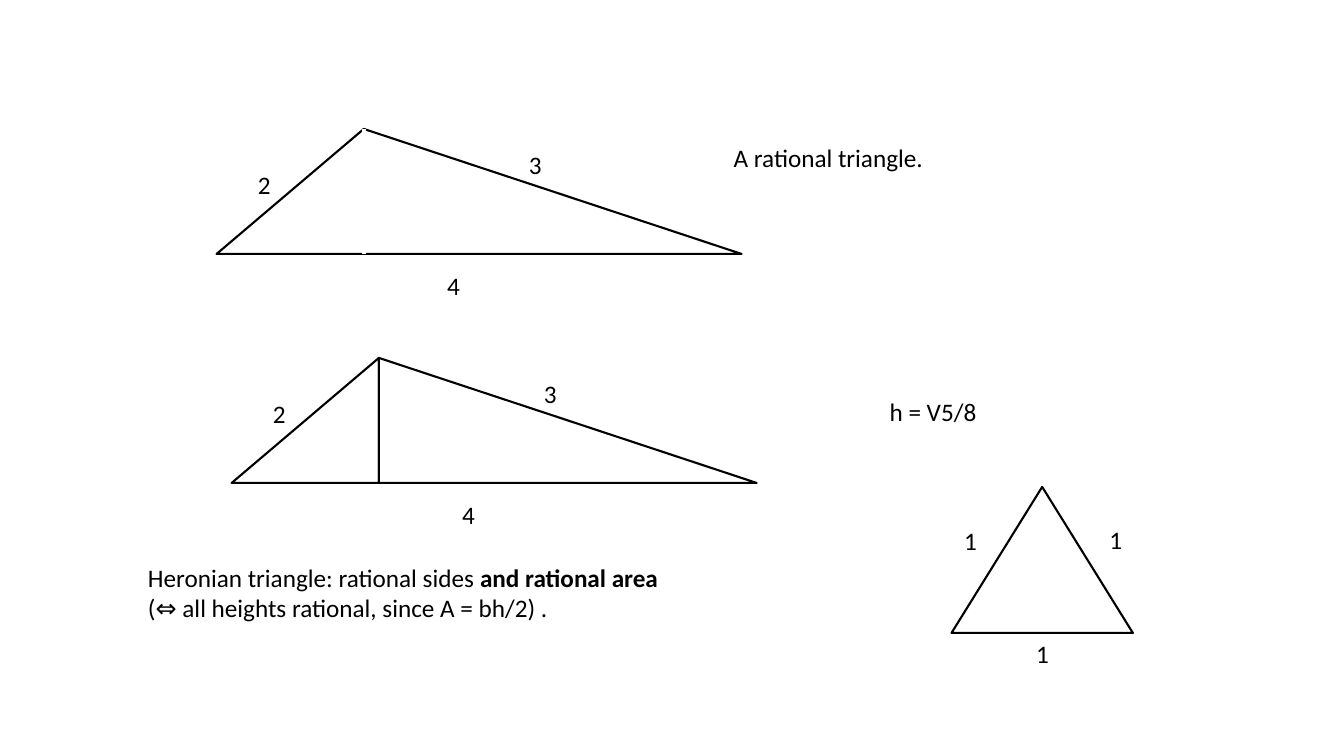
"""Build a slide comparing rational and Heronian triangles."""
from pptx import Presentation
from pptx.dml.color import RGBColor
from pptx.enum.shapes import MSO_CONNECTOR as Connector, MSO_SHAPE as Shape
from pptx.enum.text import MSO_AUTO_SIZE as AutoSize
from pptx.oxml.ns import qn
from pptx.util import Cm, Pt
from lxml.etree import SubElement

BLACK = RGBColor(0x00, 0x00, 0x00)
WHITE = RGBColor(0xFF, 0xFF, 0xFF)


def write_span(para, text, font="Calibri", size=18, color=BLACK, bold=False):
    span = para.add_run()
    span.text = text
    span.font.name = font
    span.font.size = Pt(size)
    span.font.color.rgb = color
    span.font.bold = bold


class TrianglePage:
    label_width, line_height = 0.84, 1.02

    def __init__(self, page):
        self.page = page
        self.shapes = page.shapes

    def start_group(self):
        self.shapes = self.page.shapes.add_group_shape().shapes

    def end_group(self):
        self.shapes = self.page.shapes

    def text(self, left, top, width, height, paragraphs, wrap=True):
        box = self.shapes.add_textbox(Cm(left), Cm(top), Cm(width), Cm(height))
        frame = box.text_frame
        frame.word_wrap = wrap
        frame.auto_size = AutoSize.SHAPE_TO_FIT_TEXT
        for index, spans in enumerate(paragraphs):
            para = frame.add_paragraph() if index else frame.paragraphs[0]
            for text, bold in spans:
                write_span(para, text, bold=bold)

    def line_of_text(self, left, top, width, text, wrap=False):
        self.text(left, top, width, self.line_height, [[(text, False)]], wrap)

    def label(self, left, top, text):
        self.line_of_text(left, top, self.label_width, text)

    def triangle(self, kind, left, top, width, height, flipped=False):
        shape = self.shapes.add_shape(kind, Cm(left), Cm(top), Cm(width), Cm(height))
        shape.shadow.inherit = False
        shape.fill.background()
        shape.line.color.rgb = BLACK
        shape.line.width = Pt(1.5)
        if flipped:
            shape._element.spPr.xfrm.set("flipH", "1")

    def vertical(self, left, top, height, color, weight):
        line = self.shapes.add_connector(
            Connector.STRAIGHT, Cm(left), Cm(top), Cm(left), Cm(top + height))
        line.line.color.rgb = color
        line.line.width = Pt(weight)
        SubElement(line._element.spPr, qn("a:effectLst"))

    def scalene(self, apex_x, apex_y, show_height):
        height, left_base, right_base = 3.15, 3.71, 9.52
        self.triangle(Shape.RIGHT_TRIANGLE, apex_x, apex_y, right_base, height)
        self.triangle(Shape.RIGHT_TRIANGLE, apex_x - left_base, apex_y,
                      left_base, height, flipped=True)
        for text, across, down in (("2", -2.92, 0.89), ("3", 3.91, 0.38), ("4", 1.85, 3.43)):
            self.label(apex_x + across, apex_y + down, text)
        if not show_height:
            self.vertical(apex_x, apex_y, height, WHITE, 3)


def main():
    deck = Presentation()
    deck.slide_width, deck.slide_height = Cm(33.87), Cm(19.05)
    page = TrianglePage(deck.slides.add_slide(deck.slide_layouts[6]))

    page.start_group()
    page.scalene(9.17, 3.25, show_height=False)

    page.start_group()
    page.scalene(9.55, 9.02, show_height=True)
    page.line_of_text(22.17, 9.86, 2.72, "h = V5/8")

    page.end_group()
    page.text(3.48, 14.05, 15.21, 1.8, [
        [("Heronian triangle: rational sides ", False), ("and rational area", True)],
        [("(⇔ all heights rational, since A = bh/2) .", False)],
    ])

    page.start_group()
    page.triangle(Shape.ISOSCELES_TRIANGLE, 23.98, 12.27, 4.57, 3.68)
    for left, top in ((27.71, 13.08), (25.86, 15.95), (24.05, 13.11)):
        page.label(left, top, "1")

    page.end_group()
    page.line_of_text(18.24, 3.45, 6.65, "A rational triangle.", wrap=True)

    deck.save("out.pptx")


if __name__ == "__main__":
    main()
